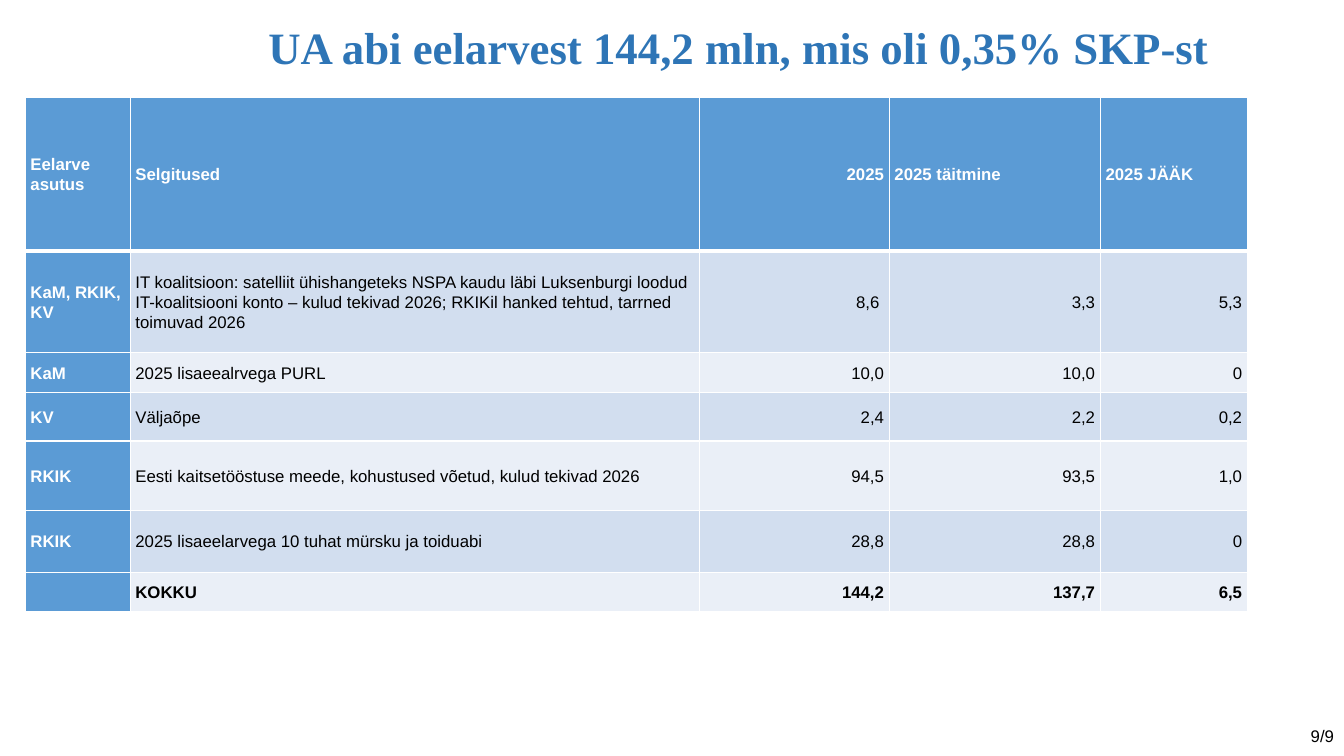
from pptx import Presentation
from pptx.dml.color import RGBColor
from pptx.enum.text import MSO_ANCHOR, MSO_AUTO_SIZE, PP_ALIGN
from pptx.oxml import parse_xml
from pptx.oxml.ns import nsdecls
from pptx.util import Pt

EMU_PER_PX = 9525
PAGE_SIZE = (1280, 720)
BLUE, WHITE, BLACK = "5B9BD5", "FFFFFF", "000000"
BANDS = ("D2DEEF", "EAEFF7")
COLUMN_WIDTHS = (100, 542, 181, 201, 140)
ROW_HEIGHTS = (146, 97, 38, 46, 66, 59, 38)
BUDGET_ROWS = (
    ("Eelarve asutus", "Selgitused", "2025", "2025 täitmine", "2025 JÄÄK"),
    ("KaM, RKIK, KV",
     "IT koalitsioon: satelliit ühishangeteks NSPA kaudu läbi Luksenburgi loodud "
     "IT-koalitsiooni konto – kulud tekivad 2026; RKIKil hanked tehtud, tarrned "
     "toimuvad 2026", "8,6 ", "3,3", "5,3"),
    ("KaM", "2025 lisaeealrvega PURL", "10,0", "10,0", "0"),
    ("KV", "Väljaõpe", "2,4", "2,2", "0,2"),
    ("RKIK", "Eesti kaitsetööstuse meede, kohustused võetud, kulud tekivad 2026",
     "94,5", "93,5", "1,0"),
    ("RKIK", "2025 lisaeelarvega 10 tuhat mürsku ja toiduabi", "28,8", "28,8", "0"),
    ("", "KOKKU", "144,2", "137,7", "6,5"),
)


def px(length):
    """Turn pixels into EMU."""
    return length * EMU_PER_PX


def color(value):
    """Turn a hex string into a colour."""
    return RGBColor.from_string(value)


def style_font(font, name, size, hex_color, bold=False):
    """Set the face, size, colour and weight of a font."""
    font.name, font.size, font.bold = name, Pt(size), bold
    font.color.rgb = color(hex_color)


def add_title(page, box):
    """Fill the title placeholder inside the box."""
    title = page.shapes.title
    title.left, title.top, title.width, title.height = map(px, box)
    frame = title.text_frame
    frame.text = "UA abi eelarvest 144,2 mln, mis oli 0,35% SKP-st"
    frame.auto_size = MSO_AUTO_SIZE.NONE
    frame.vertical_anchor = MSO_ANCHOR.MIDDLE
    para = frame.paragraphs[0]
    para.alignment, para.line_spacing = PP_ALIGN.LEFT, 0.9
    style_font(para.font, "Times New Roman", 32, "2E75B6", True)


def add_borders(cell, top, bottom):
    """Draw white borders around a cell, with top and bottom widths in points."""
    properties = cell._tc.get_or_add_tcPr()
    for side, width in (("L", 1), ("R", 1), ("T", top), ("B", bottom)):
        properties.append(parse_xml(
            f'<a:ln{side} {nsdecls("a")} w="{Pt(width)}"><a:solidFill>'
            f'<a:srgbClr val="{WHITE}"/></a:solidFill></a:ln{side}>'))


def fill_cell(cell, text, row, column):
    """Write and format one cell according to its place in the table."""
    heading = row == 0 or column == 0
    total = row == len(BUDGET_ROWS) - 1
    add_borders(cell, 3 if row == 1 else 1, 3 if row == 0 else 1)
    cell.fill.solid()
    cell.fill.fore_color.rgb = color(BLUE if heading else BANDS[(row - 1) % 2])
    cell.margin_left = cell.margin_right = px(5)
    cell.margin_top = cell.margin_bottom = 0
    cell.vertical_anchor = MSO_ANCHOR.MIDDLE
    cell.text = text
    para = cell.text_frame.paragraphs[0]
    numeric = column == 2 or (row > 0 and column > 2)
    para.alignment = PP_ALIGN.RIGHT if numeric else PP_ALIGN.LEFT
    para.line_spacing, para.space_after = 1.07, Pt(8)
    style_font(para.font, "Arial", 12, WHITE if heading else BLACK, heading or total)


def add_budget_table(page, left, top):
    """Build the budget table from its top left corner."""
    table = page.shapes.add_table(
        len(ROW_HEIGHTS), len(COLUMN_WIDTHS), px(left), px(top),
        px(sum(COLUMN_WIDTHS)), px(sum(ROW_HEIGHTS))).table
    for column, width in zip(table.columns, COLUMN_WIDTHS):
        column.width = px(width)
    for row, height in zip(table.rows, ROW_HEIGHTS):
        row.height = px(height)
    for row, texts in enumerate(BUDGET_ROWS):
        for column, text in enumerate(texts):
            fill_cell(table.cell(row, column), text, row, column)


def add_page_number(page, box):
    """Write the page number at the right of the box."""
    frame = page.shapes.add_textbox(*map(px, box)).text_frame
    frame.word_wrap = True
    frame.vertical_anchor = MSO_ANCHOR.MIDDLE
    frame.text = "9/9"
    para = frame.paragraphs[0]
    para.alignment = PP_ALIGN.RIGHT
    style_font(para.font, "Arial", 12, BLACK)


def main():
    """Build the slide and save the deck."""
    deck = Presentation()
    deck.slide_width, deck.slide_height = map(px, PAGE_SIZE)
    page = deck.slides.add_slide(deck.slide_layouts[5])
    add_title(page, (246, 25, 941, 45))
    add_budget_table(page, 24, 93)
    add_page_number(page, (992, 682, 288, 38))
    deck.save("out.pptx")


if __name__ == "__main__":
    main()
